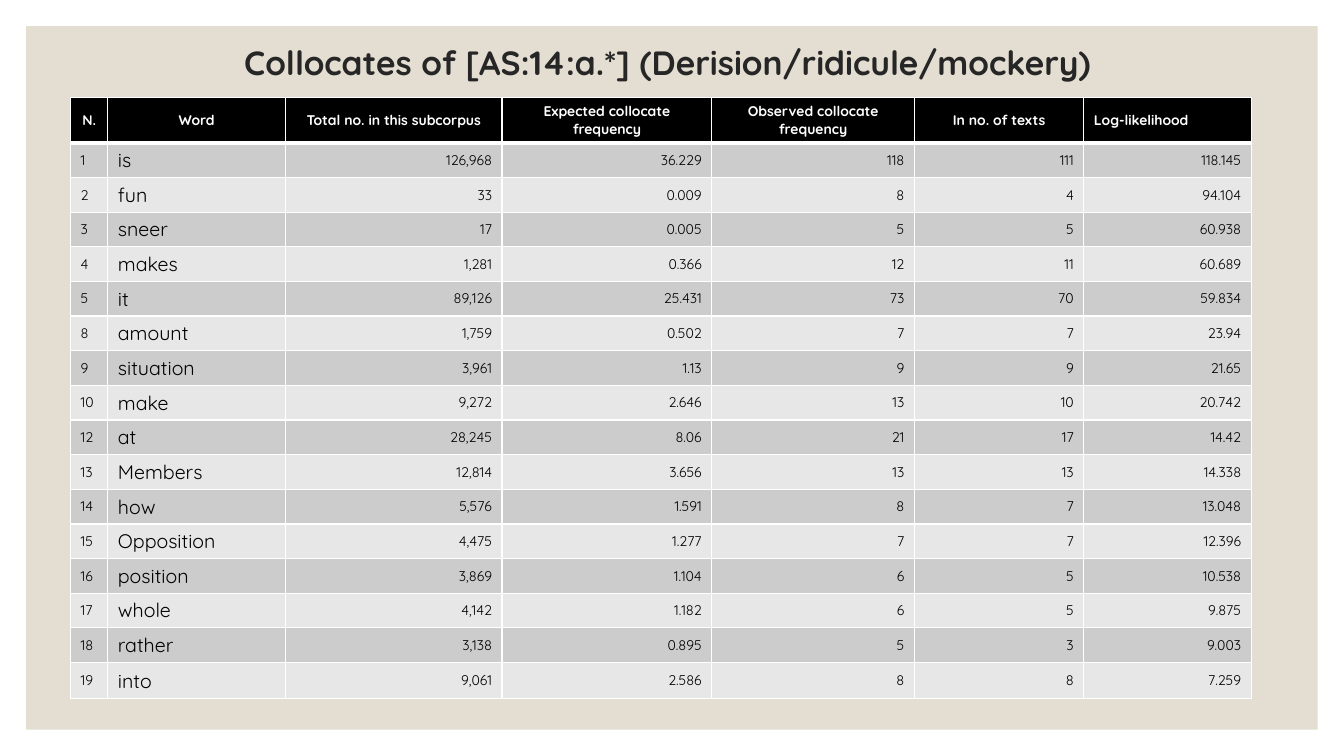
"""Build the slide with the table of collocates of derision, ridicule and mockery."""
from dataclasses import dataclass

from pptx import Presentation
from pptx.dml.color import RGBColor as RGB
from pptx.enum.shapes import MSO_SHAPE as SHAPE
from pptx.enum.text import MSO_ANCHOR as ANCHOR, MSO_AUTO_SIZE as AUTO, PP_ALIGN as ALIGN
from pptx.oxml import parse_xml
from pptx.oxml.ns import nsdecls
from pptx.util import Inches, Pt


@dataclass(frozen=True)
class Theme:
    font: str = "Quicksand"
    panel: str = "E3DED1"
    title: str = "262626"
    header: str = "000000"
    bands: tuple = ("E7E7E7", "CCCCCC")
    light: str = "FFFFFF"
    dark: str = "000000"
    title_size: int = 24
    word_size: int = 14
    cell_size: int = 10


theme = Theme()


def add_run(p, text, size, color, bold=False):
    r = p.add_run()
    r.text = text
    r.font.name = theme.font
    r.font.size = Pt(size)
    r.font.bold = bold
    r.font.color.rgb = RGB.from_string(color)


def add_border(cell, side, width):
    cell._tc.get_or_add_tcPr().append(parse_xml(
        f'<a:ln{side} {nsdecls("a")} w="{Pt(width)}"><a:solidFill>'
        f'<a:srgbClr val="{theme.light}"/></a:solidFill></a:ln{side}>'))


prs = Presentation()
prs.slide_width = Inches(13.33)
prs.slide_height = Inches(7.5)
slide = prs.slides.add_slide(prs.slide_layouts[5])

panel = slide.shapes.add_shape(
    SHAPE.RECTANGLE, Inches(0.26), Inches(0.26), Inches(12.81), Inches(6.98))
panel.shadow.inherit = False
panel.fill.solid()
panel.fill.fore_color.rgb = RGB.from_string(theme.panel)
panel.line.fill.background()
slide.slide_layout.shapes._spTree.insert(2, panel._element)

title = slide.shapes.title
title.left, title.top = Inches(0.58), Inches(0.35)
title.width, title.height = Inches(12.08), Inches(0.59)
tf = title.text_frame
tf.auto_size = AUTO.NONE
tf.word_wrap = True
tf.vertical_anchor = ANCHOR.MIDDLE
p = tf.paragraphs[0]
p.alignment = ALIGN.CENTER
p.line_spacing = 0.9
add_run(p, "Collocates of [AS:14:a.*] (Derision/ridicule/mockery)",
        theme.title_size, theme.title, True)

rows = [
    ("N.", "Word", "Total no. in this subcorpus", "Expected collocate frequency",
     "Observed collocate frequency", "In no. of texts", "Log-likelihood"),
    ("1", "is", "126,968", "36.229", "118", "111", "118.145"),
    ("2", "fun", "33", "0.009", "8", "4", "94.104"),
    ("3", "sneer", "17", "0.005", "5", "5", "60.938"),
    ("4", "makes", "1,281", "0.366", "12", "11", "60.689"),
    ("5", "it", "89,126", "25.431", "73", "70", "59.834"),
    ("8", "amount", "1,759", "0.502", "7", "7", "23.94"),
    ("9", "situation", "3,961", "1.13", "9", "9", "21.65"),
    ("10", "make", "9,272", "2.646", "13", "10", "20.742"),
    ("12", "at", "28,245", "8.06", "21", "17", "14.42"),
    ("13", "Members", "12,814", "3.656", "13", "13", "14.338"),
    ("14", "how", "5,576", "1.591", "8", "7", "13.048"),
    ("15", "Opposition", "4,475", "1.277", "7", "7", "12.396"),
    ("16", "position", "3,869", "1.104", "6", "5", "10.538"),
    ("17", "whole", "4,142", "1.182", "6", "5", "9.875"),
    ("18", "rather", "3,138", "0.895", "5", "3", "9.003"),
    ("19", "into", "9,061", "2.586", "8", "8", "7.259"),
]
col_widths = [0.37, 1.76, 2.15, 2.08, 2.01, 1.68, 1.66]
row_heights = [0.44] + [0.34] * 15 + [0.36]

frame = slide.shapes.add_table(
    len(rows), len(col_widths), Inches(0.7), Inches(0.97),
    Inches(sum(col_widths)), Inches(sum(row_heights)))
table = frame.table
for column, width in zip(table.columns, col_widths):
    column.width = Inches(width)
for row, height in zip(table.rows, row_heights):
    row.height = Inches(height)

for i, values in enumerate(rows):
    is_header = i == 0
    for j, value in enumerate(values):
        cell = table.cell(i, j)
        for side in "LRTB":
            thick = (side == "B" and i == 0) or (side == "T" and i == 1)
            add_border(cell, side, 3 if thick else 1)
        cell.fill.solid()
        cell.fill.fore_color.rgb = RGB.from_string(
            theme.header if is_header else theme.bands[i % 2])
        cell.vertical_anchor = ANCHOR.MIDDLE
        p = cell.text_frame.paragraphs[0]
        if is_header:
            p.alignment = ALIGN.LEFT if value == "Log-likelihood" else ALIGN.CENTER
        else:
            p.alignment = ALIGN.LEFT if j < 2 else ALIGN.RIGHT
        size = theme.word_size if j == 1 and not is_header else theme.cell_size
        add_run(p, value, size, theme.light if is_header else theme.dark, is_header)

prs.save("out.pptx")
